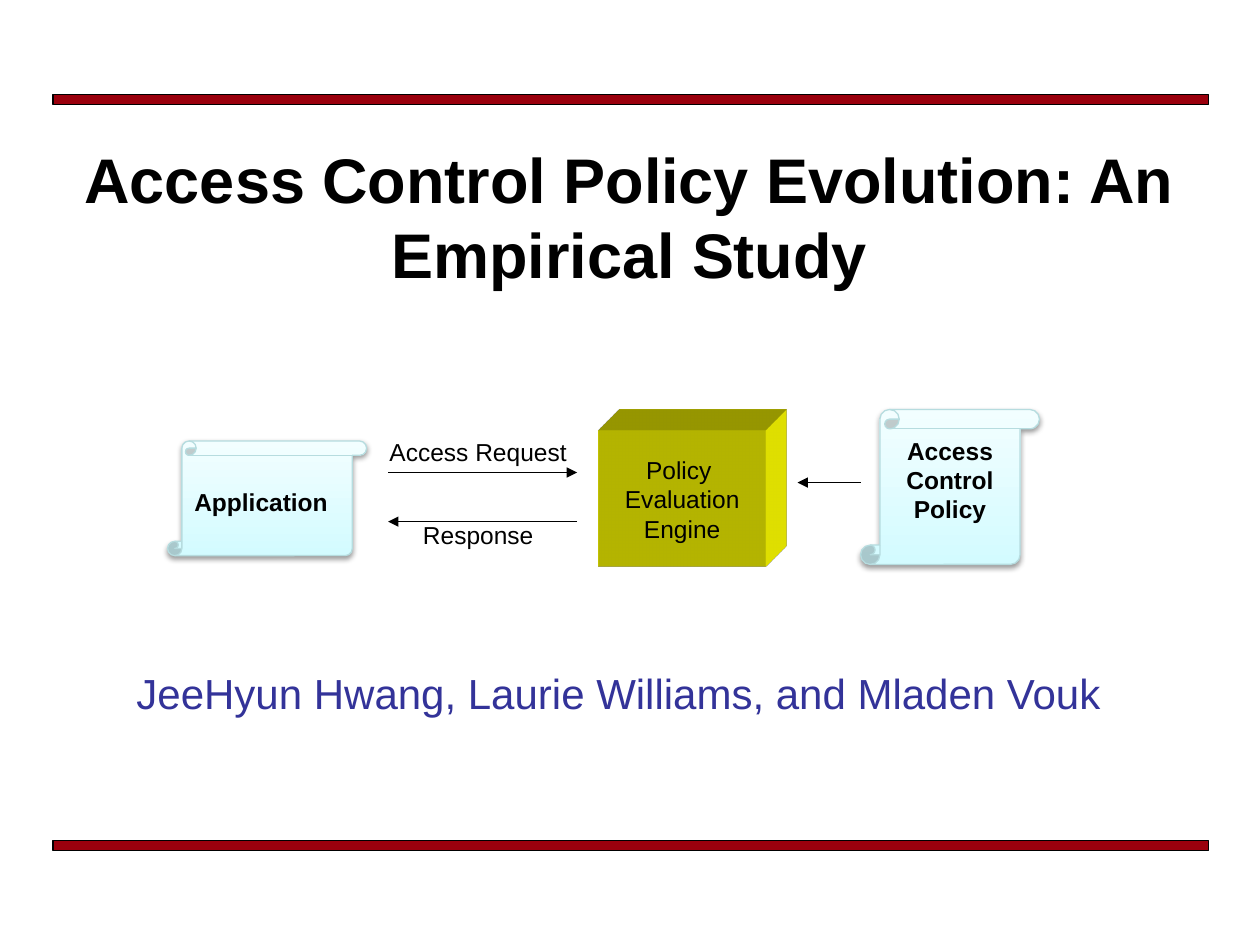
from lxml import etree
from pptx import Presentation
from pptx.dml.color import RGBColor
from pptx.enum.shapes import MSO_CONNECTOR, MSO_SHAPE
from pptx.enum.text import MSO_ANCHOR, PP_ALIGN
from pptx.oxml import parse_xml
from pptx.oxml.ns import nsdecls, qn
from pptx.util import Inches, Pt

RECT = MSO_SHAPE.RECTANGLE
SCROLL = MSO_SHAPE.VERTICAL_SCROLL
STRAIGHT = MSO_CONNECTOR.STRAIGHT
TOP, MIDDLE = MSO_ANCHOR.TOP, MSO_ANCHOR.MIDDLE
CENTER, JUSTIFY = PP_ALIGN.CENTER, PP_ALIGN.JUSTIFY
BLACK = "000000"

SHADOW = (
    f'<a:effectLst {nsdecls("a")}>'
    '<a:outerShdw blurRad="39400" dist="20300" dir="5400000" rotWithShape="0">'
    '<a:srgbClr val="000000"><a:alpha val="38000"/></a:srgbClr>'
    '</a:outerShdw></a:effectLst>'
)
SCENE = (
    f'<a:scene3d {nsdecls("a")}><a:camera prst="legacyObliqueTopRight"/>'
    '<a:lightRig rig="legacyFlat3" dir="b"/></a:scene3d>'
)
DEPTH = (
    f'<a:sp3d {nsdecls("a")} extrusionH="430200" prstMaterial="legacyMatte">'
    '<a:extrusionClr><a:srgbClr val="FFFF00"/></a:extrusionClr></a:sp3d>'
)


def color(code):
    return RGBColor.from_string(code)


def stroke(line, code):
    line.color.rgb = color(code)
    line.width = Pt(0.75)


def write(shape, lines, size=14, code=BLACK, bold=False, align=CENTER,
          anchor=MIDDLE, wrap=True, bottom=0.05):
    """Fill a shape with one paragraph per line."""
    frame = shape.text_frame
    frame.word_wrap = wrap
    frame.vertical_anchor = anchor
    frame.margin_bottom = Inches(bottom)
    frame.text = "\n".join(lines)
    for para in frame.paragraphs:
        para.alignment = align
        font = para.font
        font.name, font.size, font.bold = "Arial", Pt(size), bold
        font.color.rgb = color(code)


def add_shape(slide, kind, box):
    shape = slide.shapes.add_shape(kind, *map(Inches, box))
    shape.shadow.inherit = False
    return shape


def add_label(slide, box, text, **style):
    label = slide.shapes.add_textbox(*map(Inches, box))
    write(label, [text], **style)
    return label


def add_bar(slide, top):
    bar = add_shape(slide, RECT, (0.42, top, 9.17, 0.08))
    bar.fill.solid()
    bar.fill.fore_color.rgb = color("9A000D")
    stroke(bar.line, BLACK)


def add_arrow(slide, start, end, y):
    arrow = slide.shapes.add_connector(
        STRAIGHT, Inches(start), Inches(y), Inches(end), Inches(y))
    stroke(arrow.line, BLACK)
    etree.SubElement(arrow.line._get_or_add_ln(), qn("a:tailEnd"), type="triangle")
    etree.SubElement(arrow._element.spPr, qn("a:effectLst"))


def add_scroll(slide, box, lines, **style):
    scroll = add_shape(slide, SCROLL, box)
    scroll.fill.gradient()
    scroll.fill.gradient_angle = 90
    for stop, code in zip(scroll.fill.gradient_stops, ("D3FBFF", "F2FEFF")):
        stop.color.rgb = color(code)
    stroke(scroll.line, "B6DCDF")
    props = scroll._element.spPr
    props.replace(props.find(qn("a:effectLst")), parse_xml(SHADOW))
    write(scroll, lines, bold=True, **style)


def add_block(slide, box, lines):
    """Draw a box with depth towards the top right."""
    block = add_shape(slide, RECT, box)
    block.fill.solid()
    block.fill.fore_color.rgb = color("FFFF00")
    block.line.fill.background()
    for part in (SCENE, DEPTH):
        block._element.spPr.append(parse_xml(part))
    write(block, lines, wrap=False)


def main():
    deck = Presentation()
    deck.slide_width, deck.slide_height = Inches(10), Inches(7.5)
    slide = deck.slides.add_slide(deck.slide_layouts[6])

    for top in (0.75, 6.67):
        add_bar(slide, top)
    authors = add_label(slide, (0.33, 5.33, 9.25, 1),
                        "JeeHyun Hwang, Laurie Williams, and Mladen Vouk ",
                        size=24, code="333399", anchor=TOP)
    authors.text_frame.paragraphs[0].line_spacing = 0.8
    add_label(slide, (0.33, 1, 9.33, 2),
              "Access Control Policy Evolution: An Empirical Study",
              size=36, bold=True, bottom=0.62)

    add_block(slide, (4.75, 3.42, 1.33, 1.08), ["Policy ", "Evaluation", "Engine"])
    add_arrow(slide, 3.08, 4.58, 3.75)
    add_arrow(slide, 4.58, 3.08, 4.14)
    for top, text in ((3.42, "Access Request"), (4.08, "Response")):
        add_label(slide, (2.92, top, 1.75, 0.34), text, anchor=TOP)
    add_scroll(slide, (1.33, 3.5, 1.58, 0.91), ["Application"], align=JUSTIFY)
    add_arrow(slide, 6.83, 6.33, 3.83)
    add_scroll(slide, (6.83, 3.25, 1.42, 1.23), ["Access", "Control", "Policy"],
               bottom=0.24)

    deck.save("out.pptx")


if __name__ == "__main__":
    main()
